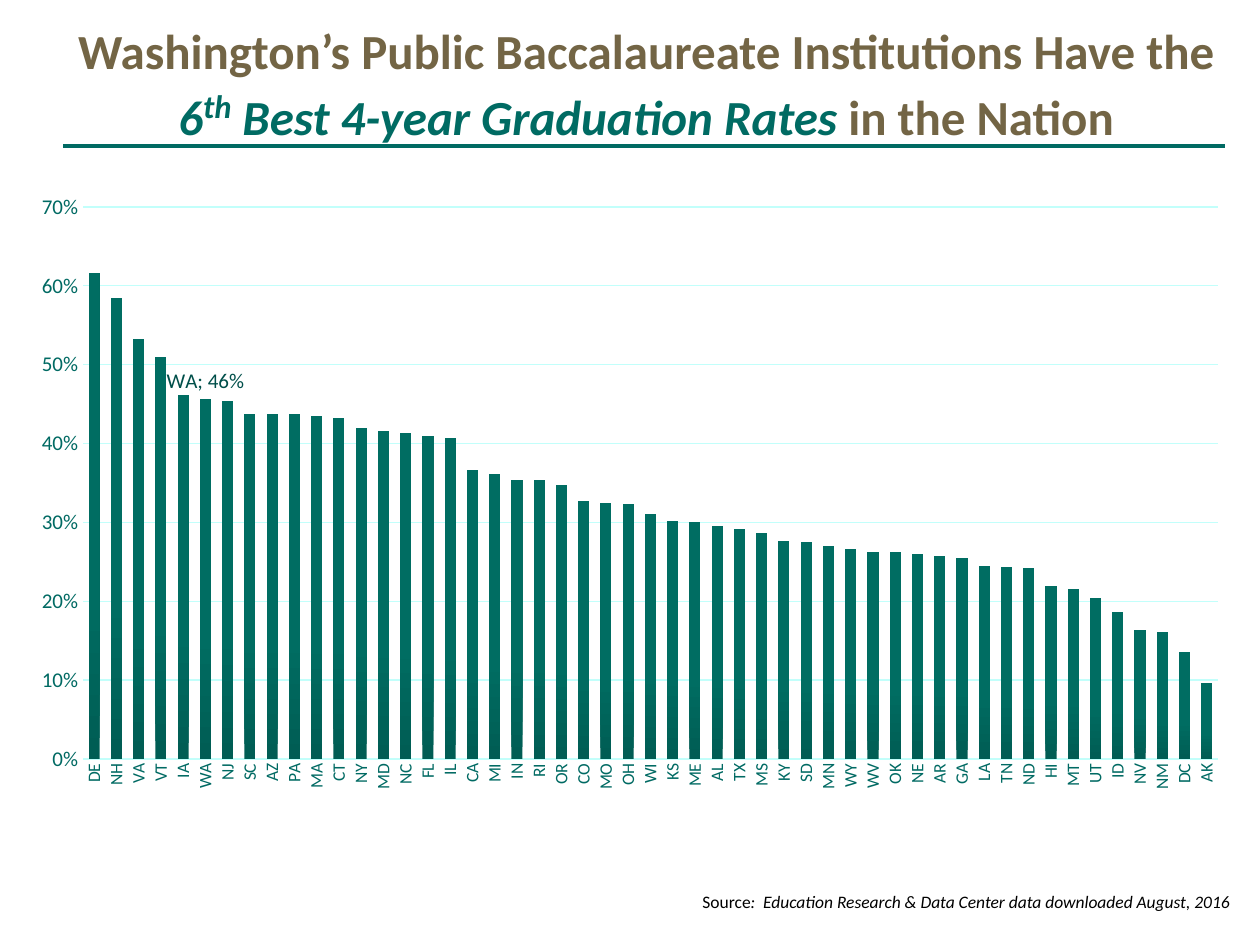
from lxml import etree
from pptx import Presentation
from pptx import util as u
from pptx.chart import data as cd
from pptx.dml import color as col
from pptx.enum import chart as ch, shapes, text
from pptx.oxml import parse_xml
from pptx.oxml.ns import nsdecls, qn

PX = 914400 / 126
FACE, TEAL, TAN = "Calibri", "006A63", "736545"
DEEP, GRID = "006B63", "C2FFFB"

RATES = """DE .616 NH .584 VA .532 VT .510 IA .462 WA .457 NJ .454 SC .438 AZ .437
PA .437 MA .435 CT .433 NY .420 MD .416 NC .414 FL .410 IL .407 CA .367 MI .361
IN .354 RI .354 OR .347 CO .327 MO .325 OH .323 WI .310 KS .302 ME .300 AL .295
TX .291 MS .286 KY .276 SD .275 MN .270 WY .266 WV .263 OK .262 NE .260 AR .257
GA .255 LA .245 TN .244 ND .242 HI .219 MT .216 UT .204 ID .186 NV .164 NM .161
DC .135 AK .096""".split()
STATES, SHARES = RATES[::2], [float(v) for v in RATES[1::2]]


def px(n):
    return u.Emu(round(n * PX))


def rgb(code):
    return col.RGBColor.from_string(code)


def style(font, size, code, **more):
    for key, val in dict(name=FACE, size=u.Pt(size), **more).items():
        setattr(font, key, val)
    font.color.rgb = rgb(code)


def stroke(line, code, width):
    line.color.rgb = rgb(code)
    line.width = u.Pt(width)


def write(slide, box, align, runs, **more):
    """Add a wrapped text box of one paragraph; return the paragraph."""
    frame = slide.shapes.add_textbox(*map(px, box)).text_frame
    frame.word_wrap = True
    frame.vertical_anchor = text.MSO_ANCHOR.TOP
    para = frame.paragraphs[0]
    para.alignment = align
    for words, size, code, form in runs:
        run = para.add_run()
        run.text = words
        style(run.font, size, code, **more, **form)
    return para


def head(slide, box):
    """Title with a rule along its lower edge."""
    x, y, w, h = box
    slant = dict(italic=True)
    para = write(slide, box, text.PP_ALIGN.CENTER, [
        ("Washington’s Public Baccalaureate Institutions Have the ", 28, TAN, {}),
        ("6", 28, DEEP, slant),
        ("th", 32, DEEP, slant),
        (" Best 4-year Graduation Rates ", 28, DEEP, slant),
        ("in the Nation", 28, TAN, {}),
    ], bold=True)
    para.runs[2].font._element.set("baseline", "30000")
    rule = slide.shapes.add_connector(
        shapes.MSO_CONNECTOR.STRAIGHT, px(x), px(y + h), px(x + w - 4), px(y + h))
    stroke(rule.line, TEAL, 2)
    etree.SubElement(rule._element.spPr, qn("a:effectLst"))


def place(chart, box, area):
    """Fix the inner plot area, given in px relative to the chart."""
    w, h = box[2:]
    parts = zip("xywh", area, (w, h, w, h))
    vals = "".join(f'<c:{k} val="{n / full:.4f}"/>' for k, n, full in parts)
    plot = chart._chartSpace.chart.plotArea
    for old in plot.findall(qn("c:layout")):
        plot.remove(old)
    plot.insert(0, parse_xml(
        f'<c:layout {nsdecls("c")}><c:manualLayout><c:layoutTarget val="inner"/>'
        f'<c:xMode val="edge"/><c:yMode val="edge"/>{vals}'
        '</c:manualLayout></c:layout>'))


def axes(chart):
    cat, val = chart.category_axis, chart.value_axis
    for axis, size in ((cat, 10), (val, 12)):
        axis.major_tick_mark = axis.minor_tick_mark = ch.XL_TICK_MARK.NONE
        style(axis.tick_labels.font, size, TEAL)
    stroke(cat.format.line, GRID, 0.75)
    cat._element.find(qn("c:txPr")).find(qn("a:bodyPr")).set("rot", "-5400000")
    for key, num in dict(minimum_scale=0, maximum_scale=0.7, major_unit=0.1).items():
        setattr(val, key, num)
    val.tick_labels.number_format = "0%"
    val.tick_labels.number_format_is_linked = False
    val.format.line.fill.background()
    stroke(val.major_gridlines.format.line, GRID, 0.75)


def mark(point):
    """Label one bar with its state and value."""
    label = point.data_label
    style(label.font, 12, "004F4A")
    label.position = ch.XL_LABEL_POSITION.OUTSIDE_END
    node = label._get_or_add_dLbl()
    node.find(qn("c:showCatName")).set("val", "1")
    node.find(qn("c:showVal")).set("val", "1")
    etree.SubElement(node, qn("c:separator")).text = "; "


def bars(slide, box):
    """Column chart of the rates by state."""
    data = cd.CategoryChartData(number_format="0%")
    data.categories = STATES
    data.add_series("Series 1", SHARES)
    chart = slide.shapes.add_chart(
        ch.XL_CHART_TYPE.COLUMN_CLUSTERED, *map(px, box), data).chart
    chart.has_legend = chart.has_title = False
    style(chart.font, 10, "000000")
    place(chart, box, (65, 26, 1135, 552))
    axes(chart)
    plot = chart.plots[0]
    for key, val in dict(gap_width=100, overlap=-24, vary_by_categories=False).items():
        setattr(plot, key, val)
    series = plot.series[0]
    fill = series.format.fill
    fill.gradient()
    fill.gradient_angle = 90
    for stop, (pos, code) in zip(fill.gradient_stops, ((0, "005D54"), (0.35, "006D62"))):
        stop.position = pos
        stop.color.rgb = rgb(code)
    mark(series.points[STATES.index("WA")])


def source(slide, box):
    """Source line at the lower right."""
    write(slide, box, text.PP_ALIGN.RIGHT, [
        ("Source", 10, "000000", {}),
        (":  Education Research & Data Center data downloaded August, 2016",
         10, "000000", dict(italic=True)),
    ])


def main():
    deck = Presentation()
    deck.slide_width, deck.slide_height = px(1260), px(945)
    slide = deck.slides.add_slide(deck.slide_layouts[6])
    head(slide, (63, 14, 1166, 132))
    bars(slide, (18, 181, 1225, 621))
    source(slide, (105, 885, 1137, 34))
    deck.save("out.pptx")


if __name__ == "__main__":
    main()
